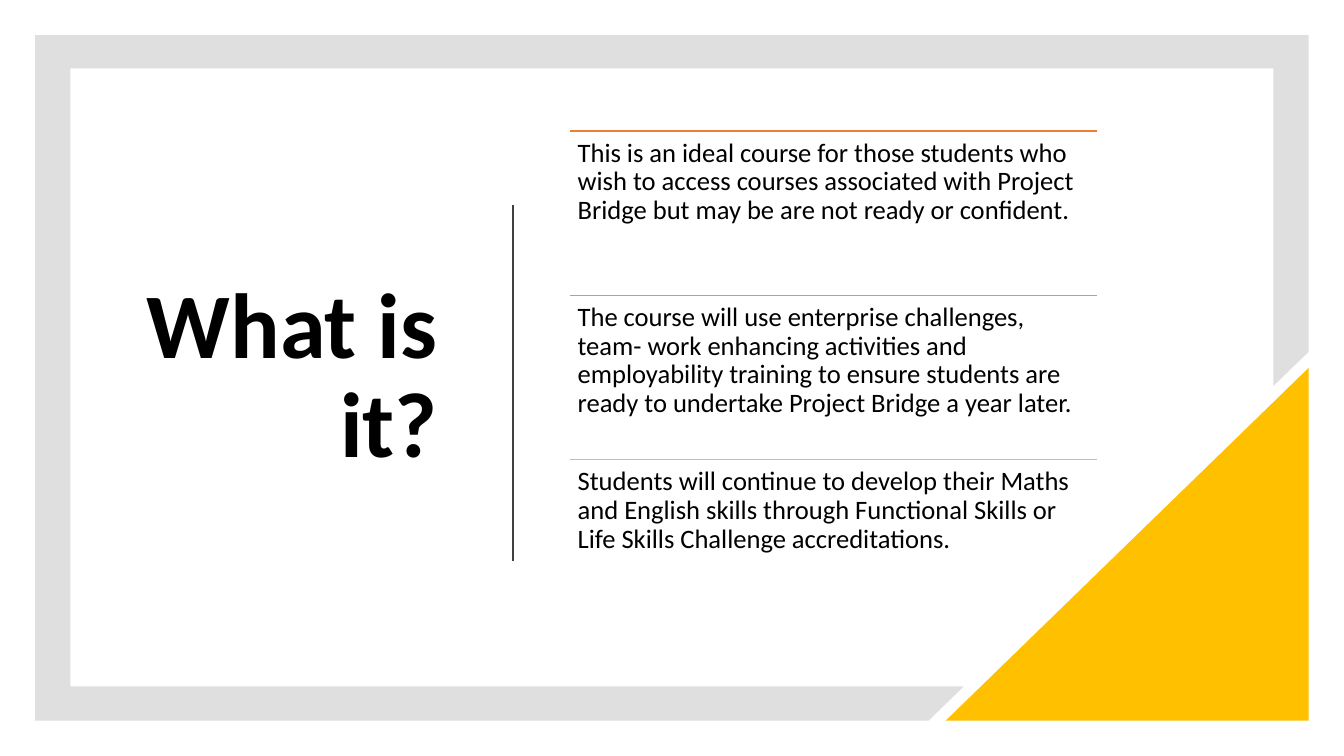
"""Build the "What is it?" course slide."""
from dataclasses import dataclass

from lxml import etree
from pptx import Presentation
from pptx import util as u
from pptx.dml.color import RGBColor
from pptx.enum import shapes, text
from pptx.oxml import ns
from pptx.slide import Slide
from pptx.text.text import TextFrame

COLORS = {
    "text": "000000",
    "frame": "808080",
    "divider": "404040",
    "orange": "ED7D31",
    "gray": "A5A5A5",
    "gold": "FFC000",
}
FONT = "Calibri"
FRAME_POINTS = [
    (0.35, 0.35), (12.98, 0.35), (12.98, 3.49), (12.63, 3.83), (12.63, 0.68),
    (0.7, 0.68), (0.7, 6.81), (9.56, 6.81), (9.21, 7.15), (0.35, 7.15),
]
LIST_LEFT, LIST_TOP, LIST_WIDTH, ROW_HEIGHT = 5.65, 1.3, 5.23, 1.63


@dataclass
class Point:
    """A course statement under a coloured rule."""
    color: str
    words: str


POINTS = [
    Point("orange", "This is an ideal course for those students who wish to access courses "
          "associated with Project Bridge but may be are not ready or confident."),
    Point("gray", "The course will use enterprise challenges, team- work enhancing activities "
          "and employability training to ensure students are ready to undertake Project "
          "Bridge a year later."),
    Point("gold", "Students will continue to develop their Maths and English skills through "
          "Functional Skills or Life Skills Challenge accreditations."),
]


def rgb(name: str) -> RGBColor:
    """Return a named colour."""
    return RGBColor.from_string(COLORS[name])


def write(frame: TextFrame, words: str, size: float, bold: bool, align: text.PP_ALIGN) -> None:
    """Fill a text frame with one formatted paragraph."""
    frame.word_wrap = True
    frame.auto_size = text.MSO_AUTO_SIZE.NONE
    para = frame.paragraphs[0]
    para.text = words
    para.alignment = align
    para.line_spacing = 0.9
    para.font.name = FONT
    para.font.size = u.Pt(size)
    para.font.bold = bold
    para.font.color.rgb = rgb("text")


def add_line(page: Slide, start: tuple[float, float], end: tuple[float, float],
             color: str, width: float) -> None:
    """Draw a straight line without a shadow."""
    line = page.shapes.add_connector(
        shapes.MSO_CONNECTOR.STRAIGHT, *map(u.Inches, (*start, *end)))
    line.line.color.rgb = rgb(color)
    line.line.width = u.Pt(width)
    etree.SubElement(line.element.spPr, ns.qn("a:effectLst"))


def add_frame(page: Slide) -> None:
    """Draw the translucent frame with its cut corner."""
    corners = [(u.Inches(x), u.Inches(y)) for x, y in FRAME_POINTS]
    builder = page.shapes.build_freeform(*corners[0])
    builder.add_line_segments(corners[1:], close=True)
    frame = builder.convert_to_shape()
    frame.shadow.inherit = False
    frame.fill.solid()
    frame.fill.fore_color.rgb = rgb("frame")
    frame.line.fill.background()
    color = frame.element.spPr.find(".//" + ns.qn("a:srgbClr"))
    etree.SubElement(color, ns.qn("a:alpha"), val="25000")


def add_corner(page: Slide) -> None:
    """Draw the gold triangle in the bottom right corner."""
    corner = page.shapes.add_shape(
        shapes.MSO_SHAPE.RIGHT_TRIANGLE, *map(u.Inches, (9.38, 3.65, 3.6, 3.5)))
    corner.element.spPr.xfrm.set("flipH", "1")
    corner.shadow.inherit = False
    corner.fill.solid()
    corner.fill.fore_color.rgb = rgb("gold")
    corner.line.fill.background()


def add_title(page: Slide) -> None:
    """Place and format the title."""
    title = page.shapes.title
    title.left, title.top, title.width, title.height = map(u.Inches, (1.1, 1.3, 3.34, 4.9))
    title.text_frame.vertical_anchor = text.MSO_ANCHOR.MIDDLE
    write(title.text_frame, "What is it?", 66, True, text.PP_ALIGN.RIGHT)


def add_point(page: Slide, point: Point, top: float) -> None:
    """Draw a rule with its statement below."""
    add_line(page, (LIST_LEFT, top), (LIST_LEFT + LIST_WIDTH, top), point.color, 1)
    box = page.shapes.add_textbox(*map(u.Inches, (LIST_LEFT, top, LIST_WIDTH, ROW_HEIGHT)))
    frame = box.text_frame
    frame.margin_left = frame.margin_right = u.Inches(0.08)
    frame.margin_top = frame.margin_bottom = u.Inches(0.08)
    write(frame, point.words, 19, False, text.PP_ALIGN.LEFT)


def main() -> None:
    """Assemble and save the deck."""
    deck = Presentation()
    deck.slide_width, deck.slide_height = u.Inches(13.33), u.Inches(7.5)
    page = deck.slides.add_slide(deck.slide_layouts.get_by_name("Title Only"))
    add_frame(page)
    add_corner(page)
    add_title(page)
    add_line(page, (5.09, 2.03), (5.09, 5.57), "divider", 1.5)
    for row, point in enumerate(POINTS):
        add_point(page, point, LIST_TOP + row * ROW_HEIGHT)
    deck.save("out.pptx")


if __name__ == "__main__":
    main()
